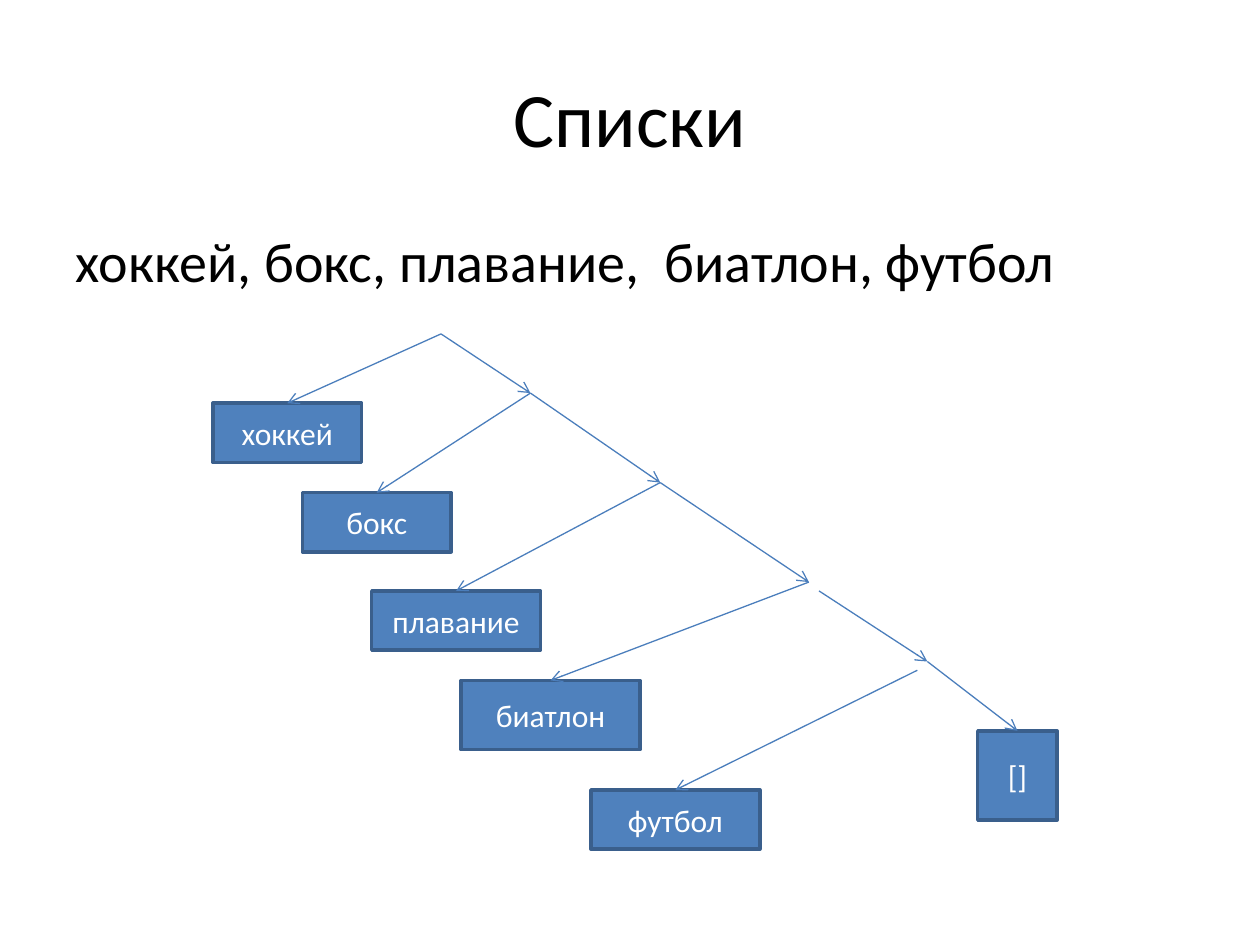
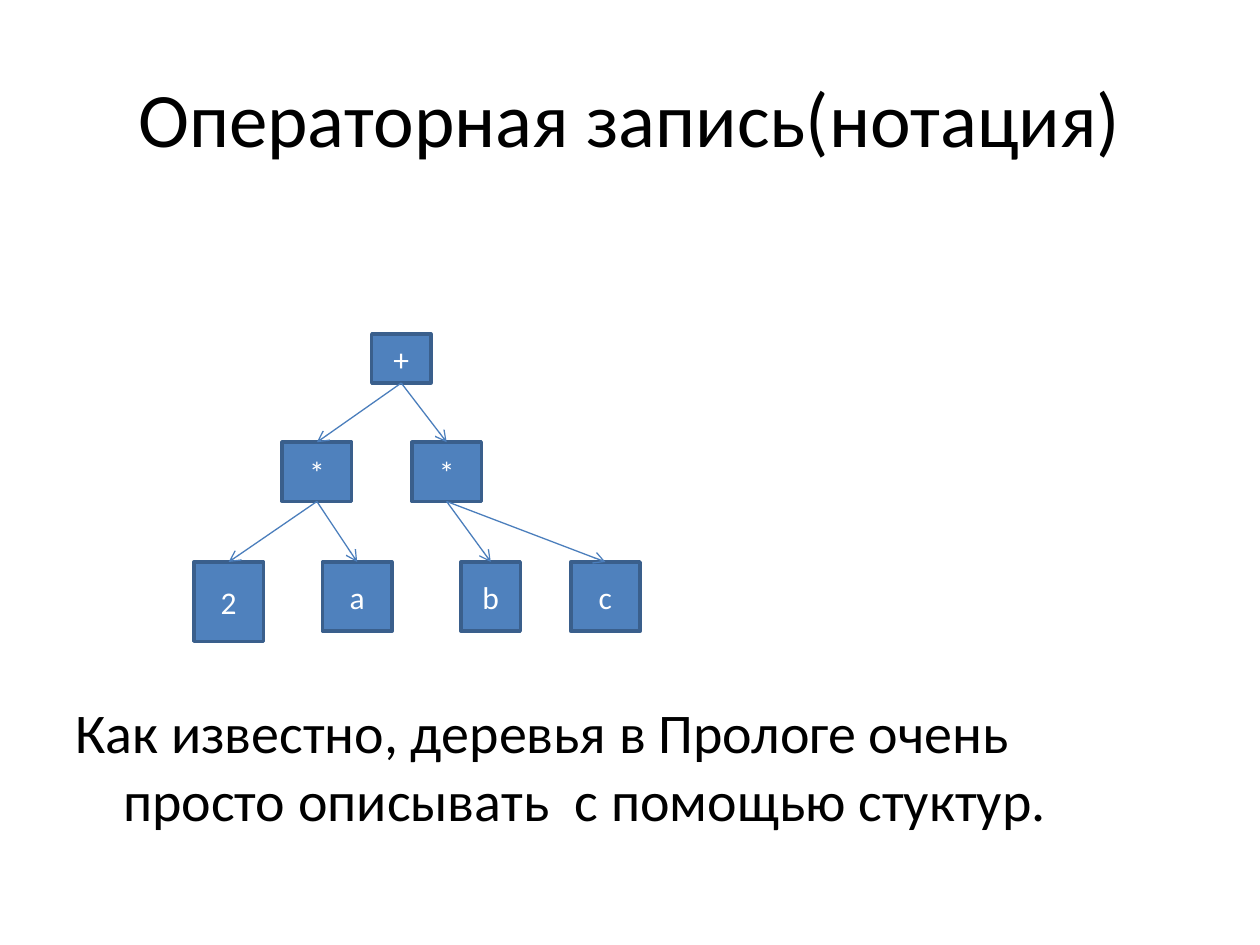
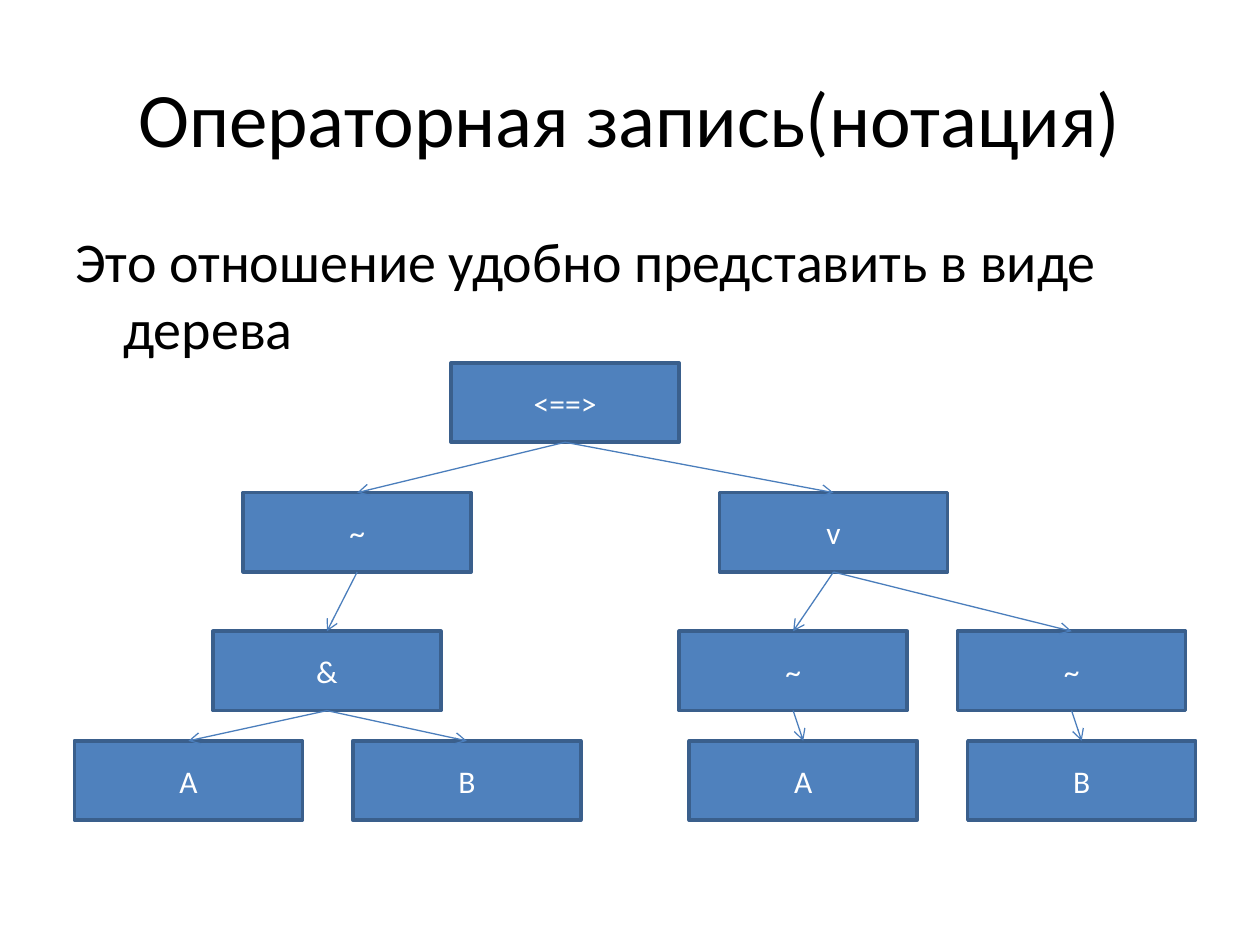
from dataclasses import dataclass

from lxml import etree
from pptx import Presentation
from pptx.dml.color import RGBColor
from pptx.enum import shapes, text
from pptx.oxml import ns
from pptx.util import Inches, Pt


@dataclass(frozen=True)
class Theme:
    font: str = "Calibri"
    ink: str = "000000"
    light: str = "FFFFFF"
    fill: str = "4F81BD"
    border: str = "3A5F8C"
    arrow: str = "4B7EBC"
    title_size: int = 44
    body_size: int = 32
    node_size: int = 18
    border_width: float = 2
    arrow_width: float = 0.75


THEME = Theme()
RECT = shapes.MSO_SHAPE.RECTANGLE
PROCESS = shapes.MSO_SHAPE.FLOWCHART_PROCESS
TOP, BOTTOM = 0, 2

# Content: nodes are key: (label, shape, left, top, width, height)
LIST_NODES = {
    "hockey": ("хоккей", PROCESS, 1.69, 3.2, 1.18, 0.47),
    "boxing": ("бокс", PROCESS, 2.4, 3.91, 1.18, 0.47),
    "swimming": ("плавание", PROCESS, 2.95, 4.69, 1.34, 0.47),
    "biathlon": ("биатлон", PROCESS, 3.66, 5.4, 1.42, 0.55),
    "football": ("футбол", PROCESS, 4.69, 6.27, 1.34, 0.47),
    "empty": ("[]", RECT, 7.76, 5.8, 0.63, 0.71),
}
# Points where the list splits into head and tail
SPLITS = [(3.5, 2.65), (4.21, 3.12), (5.24, 3.83), (6.42, 4.62)]
LAST_SPLIT = (7.36, 5.25)
LIST_LINKS = [
    *zip(SPLITS, ["hockey", "boxing", "swimming", "biathlon"]),
    *zip(SPLITS, SPLITS[1:]),
    ((6.5, 4.69), LAST_SPLIT),
    ((7.28, 5.32), "football"),
    (LAST_SPLIT, "empty"),
]

SUM_NODES = {
    "sum": ("+", RECT, 2.95, 2.65, 0.47, 0.39),
    "left product": ("*", RECT, 2.24, 3.51, 0.55, 0.47),
    "right product": ("*", PROCESS, 3.27, 3.51, 0.55, 0.47),
    "2": ("2", PROCESS, 1.54, 4.46, 0.55, 0.63),
    "a": ("a", PROCESS, 2.56, 4.46, 0.55, 0.55),
    "b": ("b", PROCESS, 3.66, 4.46, 0.47, 0.55),
    "c": ("c", PROCESS, 4.53, 4.46, 0.55, 0.55),
}
SUM_LINKS = [
    ("sum", "left product"), ("sum", "right product"),
    ("left product", "2"), ("left product", "a"),
    ("right product", "b"), ("right product", "c"),
]

# Logic tree: each level has a top and its (key, label, left) nodes
LOGIC_LEVELS = [
    (2.88, [("equal", "<==>", 3.58)]),
    (3.91, [("not and", "~", 1.93), ("or", "v", 5.71)]),
    (5.01, [("and", "&", 1.69), ("not A", "~", 5.39), ("not B", "~", 7.6)]),
    (5.88, [("left A", "A", 0.59), ("left B", "B", 2.8),
            ("right A", "A", 5.47), ("right B", "B", 7.68)]),
]
LOGIC_NODES = {key: (label, RECT, left, top, 1.81, 0.63)
               for top, level in LOGIC_LEVELS for key, label, left in level}
LOGIC_LINKS = [
    ("equal", "not and"), ("equal", "or"), ("not and", "and"),
    ("and", "left A"), ("and", "left B"), ("or", "not A"), ("or", "not B"),
    ("not A", "right A"), ("not B", "right B"),
]

NOTATION = "Операторная запись(нотация)"
# Title, body text, body top, body height, nodes, links
SLIDES = [
    ("Списки", "хоккей, бокс, плавание,  биатлон, футбол", 1.75, 0.7,
     LIST_NODES, LIST_LINKS),
    (NOTATION, "Как известно, деревья в Прологе очень просто описывать  "
     "с помощью стуктур.", 5.49, 1.2, SUM_NODES, SUM_LINKS),
    (NOTATION, "Это отношение удобно представить в виде дерева", 1.75, 1.2,
     LOGIC_NODES, LOGIC_LINKS),
]


def write(shape, words, *, size, color=THEME.ink, align=text.PP_ALIGN.CENTER,
          anchor=text.MSO_ANCHOR.MIDDLE, hanging=0):
    tf = shape.text_frame
    tf.word_wrap = True
    tf.vertical_anchor = anchor
    p = tf.paragraphs[0]
    p.alignment = align
    if hanging:
        pPr = p._p.get_or_add_pPr()
        pPr.set("marL", str(Inches(hanging)))
        pPr.set("indent", str(-Inches(hanging)))
    r = p.add_run()
    r.text = words
    r.font.name = THEME.font
    r.font.size = Pt(size)
    r.font.color.rgb = RGBColor.from_string(color)


def add_node(s, label, kind, *box):
    sp = s.shapes.add_shape(kind, *map(Inches, box))
    sp.shadow.inherit = False
    sp.fill.solid()
    sp.fill.fore_color.rgb = RGBColor.from_string(THEME.fill)
    sp.line.color.rgb = RGBColor.from_string(THEME.border)
    sp.line.width = Pt(THEME.border_width)
    write(sp, label, size=THEME.node_size, color=THEME.light)
    return sp


def add_arrow(s, start, end, nodes):
    """Join two ends, each a node key or an (x, y) point."""
    def point(place):
        return (0, 0) if place in nodes else map(Inches, place)

    line = s.shapes.add_connector(shapes.MSO_CONNECTOR.STRAIGHT,
                                  *point(start), *point(end))
    if start in nodes:
        line.begin_connect(nodes[start], BOTTOM)
    if end in nodes:
        line.end_connect(nodes[end], TOP)
    line.line.color.rgb = RGBColor.from_string(THEME.arrow)
    line.line.width = Pt(THEME.arrow_width)
    etree.SubElement(line.line._get_or_add_ln(), ns.qn("a:tailEnd"), type="arrow")
    etree.SubElement(line._element.spPr, ns.qn("a:effectLst"))


def add_slide(prs, title, body, body_top, body_height, nodes, links):
    s = prs.slides.add_slide(prs.slide_layouts.get_by_name("Title Only"))
    # Title and body text
    sp = s.shapes.title
    sp.left, sp.top, sp.width, sp.height = map(Inches, (0.5, 0.3, 9, 1.25))
    write(sp, title, size=THEME.title_size)
    sp = s.shapes.add_textbox(*map(Inches, (0.5, body_top, 9, body_height)))
    write(sp, body, size=THEME.body_size, align=text.PP_ALIGN.LEFT,
          anchor=text.MSO_ANCHOR.TOP, hanging=0.38)
    # Tree
    drawn = {key: add_node(s, *node) for key, node in nodes.items()}
    for start, end in links:
        add_arrow(s, start, end, drawn)


def main():
    prs = Presentation()
    prs.slide_width, prs.slide_height = Inches(10), Inches(7.5)
    for content in SLIDES:
        add_slide(prs, *content)
    prs.save("out.pptx")


if __name__ == "__main__":
    main()
